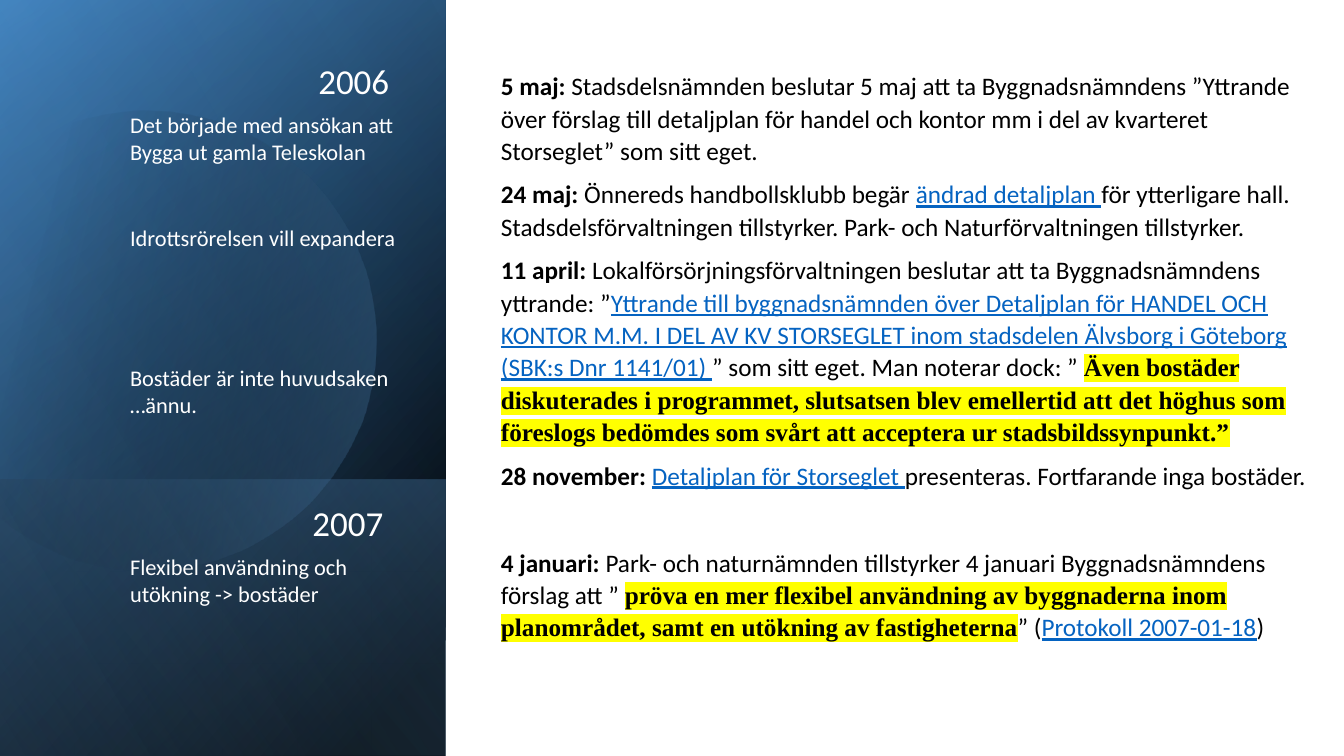
from math import cos, radians, sin

from lxml import etree
from pptx import Presentation
from pptx import util as u
from pptx.dml.color import RGBColor
from pptx.enum import shapes, text
from pptx.oxml.ns import qn

PX = 9144  # 100 px to the inch
THEME = {
    "white": "FFFFFF", "black": "000000", "link": "0563C1", "marker": "FFFF00",
    "blue": "5B9BD5", "deep": "2E75B6", "pale": "9DC3E6",
    "font": "Calibri", "quote_font": "Times New Roman",
    "year": u.Pt(25), "note": u.Pt(16), "entry": u.Pt(18),
}


def paint(shape, angle, stops):
    """Fill with a two-stop gradient; a stop is (percent, colour, opacity percent)."""
    shape.shadow.inherit = False
    shape.line.fill.background()
    shape.fill.gradient()
    shape.fill.gradient_angle = 360 - angle
    for stop, (percent, colour, opacity) in zip(shape.fill.gradient_stops, stops):
        stop.position = percent / 100
        stop.color.rgb = RGBColor.from_string(THEME[colour])
    for node, stop in zip(shape._element.spPr.iter(qn("a:srgbClr")), stops):
        if stop[2] < 100:
            etree.SubElement(node, qn("a:alpha")).set("val", str(stop[2] * 1000))


def style(font, size, colour):
    font.name, font.size = THEME["font"], THEME[size]
    font.color.rgb = RGBColor.from_string(THEME[colour])


presentation = Presentation()
presentation.slide_width, presentation.slide_height = 1333 * PX, 750 * PX
slide = presentation.slides.add_slide(presentation.slide_layouts[5])

background = slide.shapes.add_shape(shapes.MSO_SHAPE.RECTANGLE, 0, 0, 1333 * PX, 750 * PX)
background.shadow.inherit = False
background.fill.solid()
background.fill.fore_color.rgb = RGBColor.from_string(THEME["white"])
background.line.fill.background()

# Side panel: turned, mirrored rectangles with the disc below the last one
PANEL = (-154, 154, 750, 442)
FOOT = (84, 392, 274, 442)
layers = [
    (PANEL, 50, [(8, "black", 100), (100, "deep", 100)]),
    (PANEL, 30, [(0, "black", 0), (99, "blue", 46)]),
    (FOOT, 130, [(2, "blue", 29), (100, "black", 30)]),
    (None, 30, [(29, "black", 0), (100, "blue", 43)]),
    (PANEL, 120, [(0, "black", 0), (99, "pale", 11)]),
]
TILT = 16.1
ARC_START = 225 + TILT
disc_points = [
    (145 + 228 * cos(radians(ARC_START + step)), 334 + 228 * sin(radians(ARC_START + step)))
    for step in range(0, 271, 3)
]
for box, angle, stops in layers:
    if box:
        layer = slide.shapes.add_shape(
            shapes.MSO_SHAPE.RECTANGLE, *(length * PX for length in box))
        layer.rotation = 90
        layer._element.spPr.find(qn("a:xfrm")).set("flipH", "1")
    else:
        builder = slide.shapes.build_freeform(*disc_points[0], scale=PX)
        builder.add_line_segments(disc_points[1:], close=True)
        layer = builder.convert_to_shape()
        layer.rotation = 360 - TILT
    paint(layer, angle, stops)

# Years
title = slide.shapes.title
slide.shapes._spTree.append(title._element)
title.left, title.top, title.width, title.height = 46 * PX, 1 * PX, 350 * PX, 105 * PX
second_year = slide.shapes.add_textbox(40 * PX, 440 * PX, 350 * PX, 105 * PX)
for shape, year in [(title, "2006"), (second_year, "2007")]:
    frame = shape.text_frame
    frame.text = year
    frame.word_wrap = True
    frame.auto_size = text.MSO_AUTO_SIZE.NONE
    frame.vertical_anchor = text.MSO_ANCHOR.BOTTOM
    paragraph = frame.paragraphs[0]
    paragraph.alignment = text.PP_ALIGN.RIGHT
    paragraph.line_spacing = 0.9
    style(paragraph.font, "year", "white")

# Notes beside the entries
notes = [
    (110, 265, ["Det började med ansökan att", "Bygga ut gamla Teleskolan"]),
    (222, 265, ["Idrottsrörelsen vill expandera"]),
    (361, 261, ["Bostäder är inte huvudsaken", "…ännu."]),
    (549, 226, ["Flexibel användning och", "utökning -> bostäder"]),
]
for top, width, lines in notes:
    note = slide.shapes.add_textbox(129 * PX, top * PX, width * PX, 27 * len(lines) * PX)
    frame = note.text_frame
    frame.margin_left = frame.margin_top = frame.margin_right = frame.margin_bottom = 0
    frame.word_wrap = False
    frame.auto_size = text.MSO_AUTO_SIZE.SHAPE_TO_FIT_TEXT
    frame.text = "\n".join(lines)
    for paragraph in frame.paragraphs:
        style(paragraph.font, "note", "white")

# Dated entries: runs of (kind, wording)
entries = [
    [("date", "5 maj:"),
     ("plain", " Stadsdelsnämnden beslutar 5 maj att ta Byggnadsnämndens ”Yttrande över förslag "
               "till detaljplan för handel och kontor mm i del av kvarteret Storseglet” som sitt eget.")],
    [("date", "24 maj: "),
     ("plain", "Önnereds handbollsklubb begär "),
     ("link", "ändrad detaljplan "),
     ("plain", "för ytterligare hall. Stadsdelsförvaltningen tillstyrker. "
               "Park- och Naturförvaltningen tillstyrker.")],
    [("date", "11 april:"),
     ("plain", " Lokalförsörjningsförvaltningen beslutar att ta Byggnadsnämndens yttrande: ”"),
     ("link", "Yttrande till byggnadsnämnden över Detaljplan för HANDEL OCH KONTOR M.M. I DEL AV "
              "KV STORSEGLET inom stadsdelen Älvsborg i Göteborg (SBK:s Dnr 1141/01) "),
     ("plain", "” som sitt eget. Man noterar dock: ” "),
     ("quote", "Även bostäder diskuterades i programmet, slutsatsen blev emellertid att det höghus "
               "som föreslogs bedömdes som svårt att acceptera ur stadsbildssynpunkt.”")],
    [("date", "28 november: "),
     ("link", "Detaljplan för Storseglet "),
     ("plain", "presenteras. Fortfarande inga bostäder.")],
    [("date", "4 januari:"),
     ("plain", " Park- och naturnämnden tillstyrker 4 januari Byggnadsnämndens förslag att ” "),
     ("quote", "pröva en mer flexibel användning av byggnaderna inom planområdet, "
               "samt en utökning av fastigheterna"),
     ("plain", "” ("),
     ("link", "Protokoll 2007-01-18"),
     ("plain", ")")],
]
timeline = slide.shapes.add_textbox(487 * PX, 63 * PX, 823 * PX, 583 * PX)
frame = timeline.text_frame
frame.word_wrap = True
frame.auto_size = text.MSO_AUTO_SIZE.SHAPE_TO_FIT_TEXT
for index, entry in enumerate(entries):
    paragraph = frame.add_paragraph() if index else frame.paragraphs[0]
    paragraph.line_spacing = 1.07
    paragraph.space_after = u.Pt(8)
    style(paragraph.font, "entry", "black")
    for kind, wording in entry:
        run = paragraph.add_run()
        run.text = wording
        if kind in ("date", "quote"):
            run.font.bold = True
        if kind == "link":
            run.font.underline = True
            run.font.color.rgb = RGBColor.from_string(THEME["link"])
        if kind == "quote":
            highlight = etree.SubElement(run.font._element, qn("a:highlight"))
            etree.SubElement(highlight, qn("a:srgbClr")).set("val", THEME["marker"])
            run.font.name = THEME["quote_font"]
frame.paragraphs[-1].space_before = u.Pt(31)  # the new year starts here

presentation.save("out.pptx")
